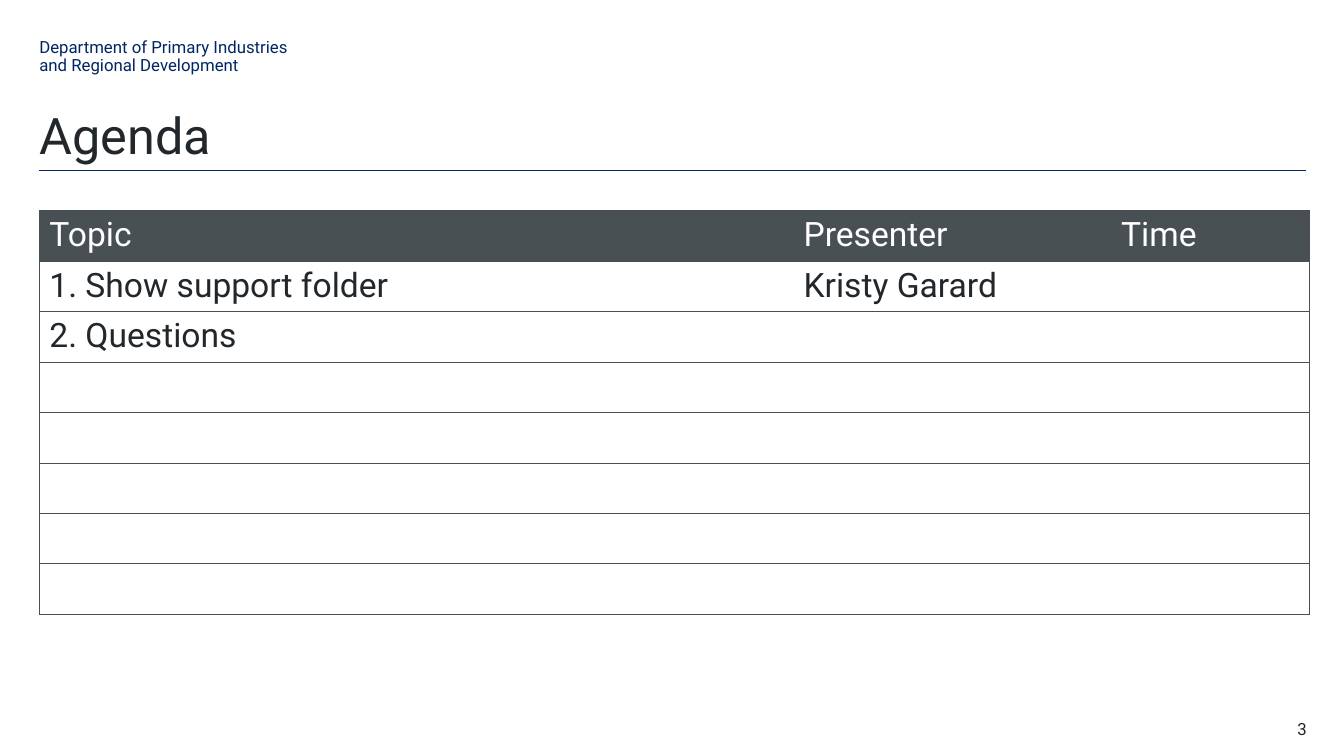
from lxml import etree
from pptx import Presentation
from pptx import util as u
from pptx.dml.color import RGBColor
from pptx.enum import shapes, text
from pptx.oxml.ns import qn

PX = 9144  # 100 px to the inch
FONT, NAVY, INK, SLATE = "Roboto", "002664", "22272B", "495054"


def rgb(value):
    return RGBColor.from_string(value)


def add_text(box, lines, size, color, spacing=None, align=None,
             anchor=text.MSO_ANCHOR.TOP):
    sp = s.shapes.add_textbox(*[v * PX for v in box])
    tf = sp.text_frame
    tf.word_wrap = True
    tf.vertical_anchor = anchor
    tf.margin_left = tf.margin_top = tf.margin_right = tf.margin_bottom = 0
    tf.text = lines
    for p in tf.paragraphs:
        p.line_spacing = spacing
        p.alignment = align
        font = p.runs[0].font
        font.name, font.size = FONT, u.Pt(size)
        font.color.rgb = rgb(color)


prs = Presentation()
prs.slide_width, prs.slide_height = 1333 * PX, 750 * PX
s = prs.slides.add_slide(prs.slide_layouts[6])

# Heading
rule = s.shapes.add_connector(shapes.MSO_CONNECTOR.STRAIGHT,
                              39 * PX, 169 * PX, 1295 * PX, 169 * PX)
rule.line.color.rgb = rgb(NAVY)
rule.line.width = u.Pt(0.5)
etree.SubElement(rule._element.spPr, qn("a:effectLst"))
add_text((39, 106, 1102, 63), "Agenda", 36, INK, 0.9,
         anchor=text.MSO_ANCHOR.MIDDLE)

# Agenda table
agenda = [
    ("Topic", "Presenter", "Time"),
    ("1. Show support folder", "Kristy Garard", ""),
    ("2. Questions", "", ""),
] + [("", "", "")] * 5
widths = (748, 315, 197)
row_height = 41
table = s.shapes.add_table(len(agenda), len(widths), 39 * PX, 209 * PX,
                           sum(widths) * PX,
                           len(agenda) * row_height * PX).table
table.first_row = table.horz_banding = False
for column, width in zip(table.columns, widths):
    column.width = width * PX

for i, row in enumerate(agenda):
    table.rows[i].height = row_height * PX
    for j, words in enumerate(row):
        cell = table.cell(i, j)
        tcPr = cell._tc.get_or_add_tcPr()
        visible = {"lnL": j == 0, "lnR": j == len(widths) - 1,
                   "lnT": True, "lnB": True}
        for side, shown in visible.items():
            ln = etree.SubElement(tcPr, qn("a:" + side), w=str(u.Pt(0.5)))
            if shown:
                fill = etree.SubElement(ln, qn("a:solidFill"))
                etree.SubElement(fill, qn("a:srgbClr"), val=SLATE)
            else:
                etree.SubElement(ln, qn("a:noFill"))
        if i == 0:
            cell.fill.solid()
            cell.fill.fore_color.rgb = rgb(SLATE)
        else:
            cell.fill.background()
        p = cell.text_frame.paragraphs[0]
        if words:
            p.text = words
            font = p.runs[0].font
            font.name, font.size = FONT, u.Pt(24)
            font.color.rgb = rgb(INK if i else "FFFFFF")
        else:
            end = etree.SubElement(p._p, qn("a:endParaRPr"), sz="2400")
            etree.SubElement(end, qn("a:latin"), typeface=FONT)

# Page number and department
add_text((1217, 713, 79, 20), "3", 12, INK, align=text.PP_ALIGN.RIGHT)
add_text((39, 39, 1063, 39),
         "Department of Primary Industries\nand Regional Development",
         12, NAVY, 0.9)

prs.save("out.pptx")
